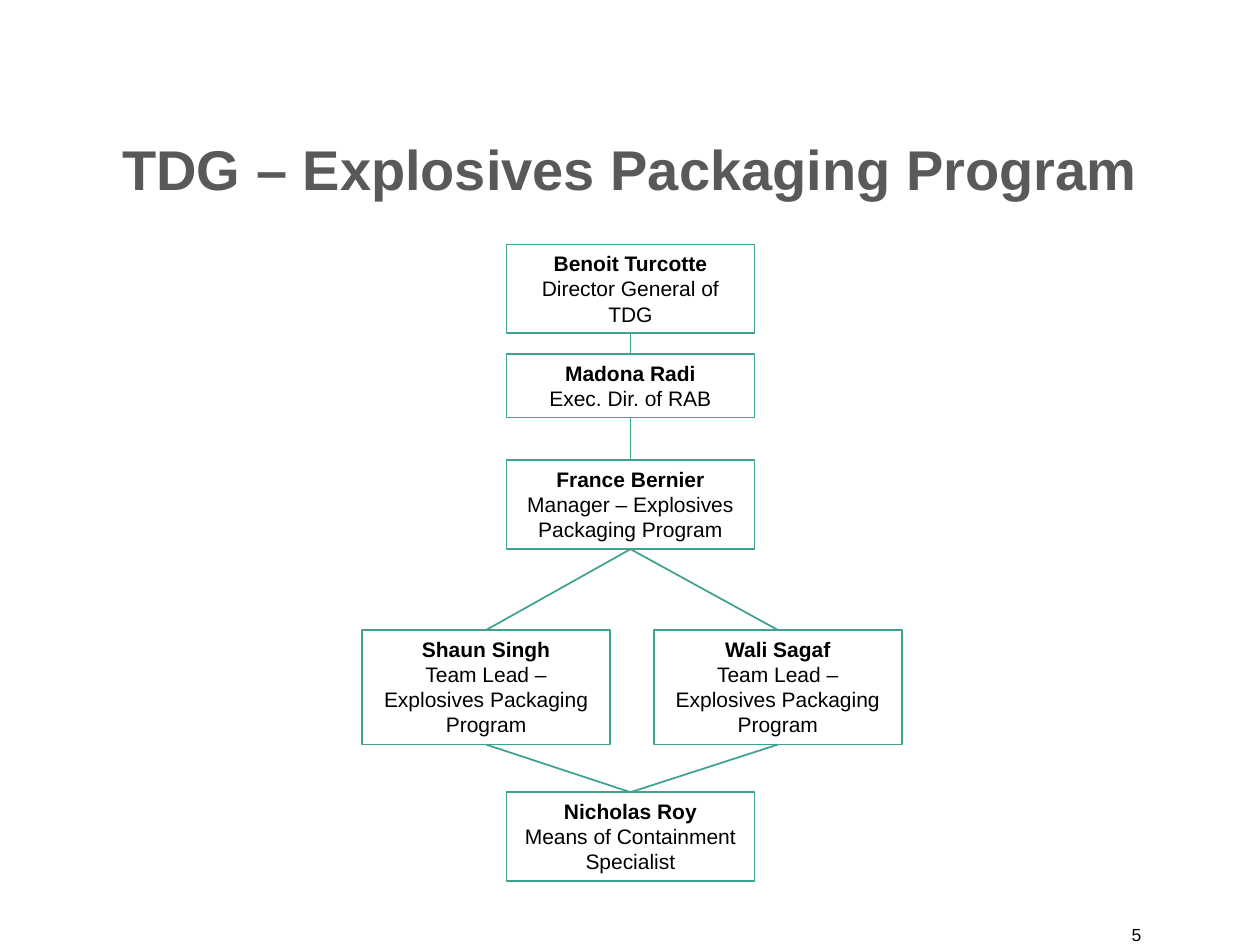
from dataclasses import dataclass

from lxml.etree import SubElement
from pptx import Presentation
from pptx.dml.color import RGBColor
from pptx.enum.shapes import MSO_CONNECTOR as Connector, MSO_SHAPE as Preset
from pptx.enum.text import MSO_ANCHOR as Anchor, MSO_AUTO_SIZE as AutoSize, PP_ALIGN as Align
from pptx.oxml.ns import qn
from pptx.shapes.autoshape import Shape
from pptx.slide import Slide
from pptx.text.text import TextFrame
from pptx.util import Cm, Pt

TEAL = "3FA291"
BOX_WIDTH = 5.0
LINE_WIDTH = Pt(1)
TOP, BOTTOM = 0, 2
MIDDLE_LEFT, WEST_LEFT, EAST_LEFT = 10.21, 7.3, 13.18


@dataclass(frozen=True)
class Member:
    name: str
    role: str
    left: float
    top: float
    height: float


MEMBERS = [
    Member("Benoit Turcotte", "Director General of TDG", MIDDLE_LEFT, 4.93, 1.79),
    Member("Madona Radi", "Exec. Dir. of RAB", MIDDLE_LEFT, 7.14, 1.28),
    Member("France Bernier", "Manager – Explosives Packaging Program", MIDDLE_LEFT, 9.28, 1.79),
    Member("Wali Sagaf", "Team Lead – Explosives Packaging Program", EAST_LEFT, 12.7, 2.31),
    Member("Shaun Singh", "Team Lead – Explosives Packaging Program", WEST_LEFT, 12.7, 2.31),
    Member("Nicholas Roy", "Means of Containment Specialist", MIDDLE_LEFT, 15.97, 1.79),
]
LINKS = [
    ("Benoit Turcotte", "Madona Radi"),
    ("Madona Radi", "France Bernier"),
    ("France Bernier", "Shaun Singh"),
    ("France Bernier", "Wali Sagaf"),
    ("Shaun Singh", "Nicholas Roy"),
    ("Wali Sagaf", "Nicholas Roy"),
]


def color(value: str) -> RGBColor:
    return RGBColor.from_string(value)


def write(frame: TextFrame, text: str, *, size: float, ink: str = "000000",
          bold: bool = False, spacing: float = 1.0, append: bool = False) -> None:
    para = frame.add_paragraph() if append else frame.paragraphs[0]
    para.alignment = Align.CENTER
    para.line_spacing = spacing
    span = para.add_run()
    span.text = text
    span.font.name = "Arial"
    span.font.size = Pt(size)
    span.font.bold = bold
    span.font.color.rgb = color(ink)


def add_title(page: Slide, text: str) -> None:
    title = page.shapes.title
    title.left, title.top = Cm(1.91), Cm(2.74)
    title.width, title.height = Cm(21.59), Cm(3.18)
    frame = title.text_frame
    frame.auto_size = AutoSize.NONE
    frame.vertical_anchor = Anchor.TOP
    write(frame, text, size=32, ink="595959", bold=True, spacing=0.9)


def add_page_number(page: Slide, number: str) -> None:
    box = page.shapes.add_textbox(Cm(20.27), Cm(18.21), Cm(5.28), Cm(1.27))
    box.text_frame.word_wrap = True
    box.text_frame.vertical_anchor = Anchor.MIDDLE
    write(box.text_frame, number, size=10)


def add_member(page: Slide, member: Member) -> Shape:
    box = page.shapes.add_shape(Preset.RECTANGLE, Cm(member.left), Cm(member.top),
                                Cm(BOX_WIDTH), Cm(member.height))
    box.shadow.inherit = False
    box.fill.solid()
    box.fill.fore_color.rgb = color("FFFFFF")
    box.line.color.rgb = color(TEAL)
    box.line.width = LINE_WIDTH
    frame = box.text_frame
    frame.word_wrap = True
    frame.auto_size = AutoSize.SHAPE_TO_FIT_TEXT
    frame.vertical_anchor = Anchor.TOP
    write(frame, member.name, size=12, bold=True)
    write(frame, member.role, size=12, append=True)
    return box


def add_link(page: Slide, upper: Shape, lower: Shape) -> None:
    link = page.shapes.add_connector(Connector.STRAIGHT, 0, 0, 0, 0)
    link.begin_connect(upper, BOTTOM)
    link.end_connect(lower, TOP)
    link.line.color.rgb = color(TEAL)
    link.line.width = LINE_WIDTH
    SubElement(link._element.spPr, qn("a:effectLst"))


def main() -> None:
    deck = Presentation()
    deck.slide_width, deck.slide_height = Cm(25.4), Cm(19.05)
    page = deck.slides.add_slide(deck.slide_layouts[5])
    add_title(page, "TDG – Explosives Packaging Program")
    add_page_number(page, "5")
    boxes = {member.name: add_member(page, member) for member in MEMBERS}
    for upper, lower in LINKS:
        add_link(page, boxes[upper], boxes[lower])
    deck.save("out.pptx")


if __name__ == "__main__":
    main()
